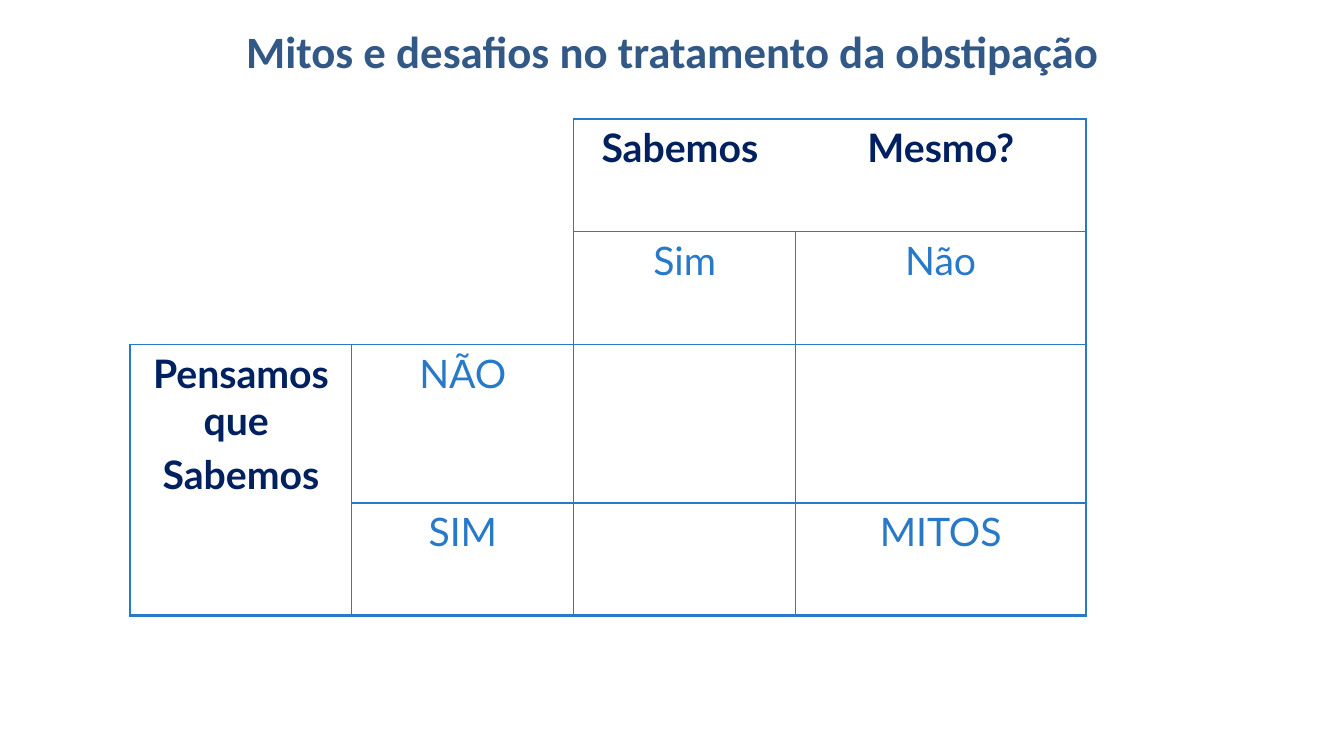
from dataclasses import dataclass

from lxml import etree
from pptx import Presentation
from pptx.dml.color import RGBColor
from pptx.enum import text
from pptx.oxml import ns
from pptx.util import Inches, Pt

BLUE = RGBColor(0x28, 0x7A, 0xC8)
NAVY = RGBColor(0x00, 0x20, 0x60)
TITLE_BLUE = RGBColor(0x32, 0x58, 0x86)

COLUMN_WIDTHS = (2.2, 2.2, 2.2, 2.88)
ROW_HEIGHTS = (1.12,) * 4
INNER_LINE, OUTER_LINE = 1, 2.25


@dataclass(frozen=True)
class Entry:
    row: int
    column: int
    wording: str
    heading: bool = False


ENTRIES = (
    Entry(0, 2, "Sabemos ", True),
    Entry(0, 3, "Mesmo?", True),
    Entry(1, 2, "Sim"),
    Entry(1, 3, "Não"),
    Entry(2, 0, "Pensamos que \nSabemos", True),
    Entry(2, 1, "NÃO"),
    Entry(3, 1, "SIM"),
    Entry(3, 3, "MITOS"),
)


def region(row: int, column: int) -> str:
    """Name the area a cell belongs to; no line runs inside an area."""
    if not (0 <= row < len(ROW_HEIGHTS) and 0 <= column < len(COLUMN_WIDTHS)):
        return "outside"
    if row < 2 and column < 2:
        return "corner"
    if row == 0:
        return "top heading"
    if row > 1 and column == 0:
        return "side heading"
    return f"{row},{column}"


def edge_width(row: int, column: int, next_row: int, next_column: int) -> float:
    areas = {region(row, column), region(next_row, next_column)}
    if len(areas) == 1 or areas == {"corner", "outside"}:
        return 0
    return OUTER_LINE if "outside" in areas else INNER_LINE


def draw_borders(cell, row: int, column: int) -> None:
    neighbours = {
        "a:lnL": (row, column - 1),
        "a:lnR": (row, column + 1),
        "a:lnT": (row - 1, column),
        "a:lnB": (row + 1, column),
    }
    properties = cell._tc.get_or_add_tcPr()
    for position, (tag, neighbour) in enumerate(neighbours.items()):
        width = edge_width(row, column, *neighbour)
        line = etree.Element(ns.qn(tag), w=str(int(Pt(width))))
        if width:
            fill = etree.SubElement(line, ns.qn("a:solidFill"))
            etree.SubElement(fill, ns.qn("a:srgbClr"), val=str(BLUE))
        else:
            etree.SubElement(line, ns.qn("a:noFill"))
        properties.insert(position, line)


def write_entry(cell, entry: Entry) -> None:
    cell.text_frame.text = entry.wording
    for index, paragraph in enumerate(cell.text_frame.paragraphs):
        paragraph.alignment = text.PP_ALIGN.CENTER
        if index:
            paragraph.space_before = Pt(5)
        for run in paragraph.runs:
            run.font.name = "Lato"
            run.font.size = Pt(28)
            run.font.bold = entry.heading
            run.font.color.rgb = NAVY if entry.heading else BLUE


def add_title(slide) -> None:
    title = slide.shapes.title
    title.left, title.top = Inches(0.67), Inches(0.17)
    title.width, title.height = Inches(12), Inches(0.66)
    title.text_frame.text = "Mitos e desafios no tratamento da obstipação"
    title.text_frame.vertical_anchor = text.MSO_ANCHOR.MIDDLE
    paragraph = title.text_frame.paragraphs[0]
    paragraph.alignment = text.PP_ALIGN.CENTER
    font = paragraph.runs[0].font
    font.name, font.size, font.bold = "Calibri", Pt(32), True
    font.color.rgb = TITLE_BLUE


def add_knowledge_matrix(slide) -> None:
    frame = slide.shapes.add_table(
        len(ROW_HEIGHTS), len(COLUMN_WIDTHS),
        Inches(1.29), Inches(1.18), Inches(9.49), Inches(4.97),
    )
    matrix = frame.table
    matrix.first_row = matrix.horz_banding = False
    for column, width in zip(matrix.columns, COLUMN_WIDTHS):
        column.width = Inches(width)
    for row, height in zip(matrix.rows, ROW_HEIGHTS):
        row.height = Inches(height)
    frame.height = Inches(4.97)

    for row in range(len(ROW_HEIGHTS)):
        for column in range(len(COLUMN_WIDTHS)):
            cell = matrix.cell(row, column)
            cell.fill.background()
            draw_borders(cell, row, column)
    for entry in ENTRIES:
        write_entry(matrix.cell(entry.row, entry.column), entry)


def main() -> None:
    presentation = Presentation()
    presentation.slide_width = Inches(13.33)
    presentation.slide_height = Inches(7.5)
    slide = presentation.slides.add_slide(presentation.slide_layouts[5])
    add_title(slide)
    add_knowledge_matrix(slide)
    presentation.save("out.pptx")


if __name__ == "__main__":
    main()
